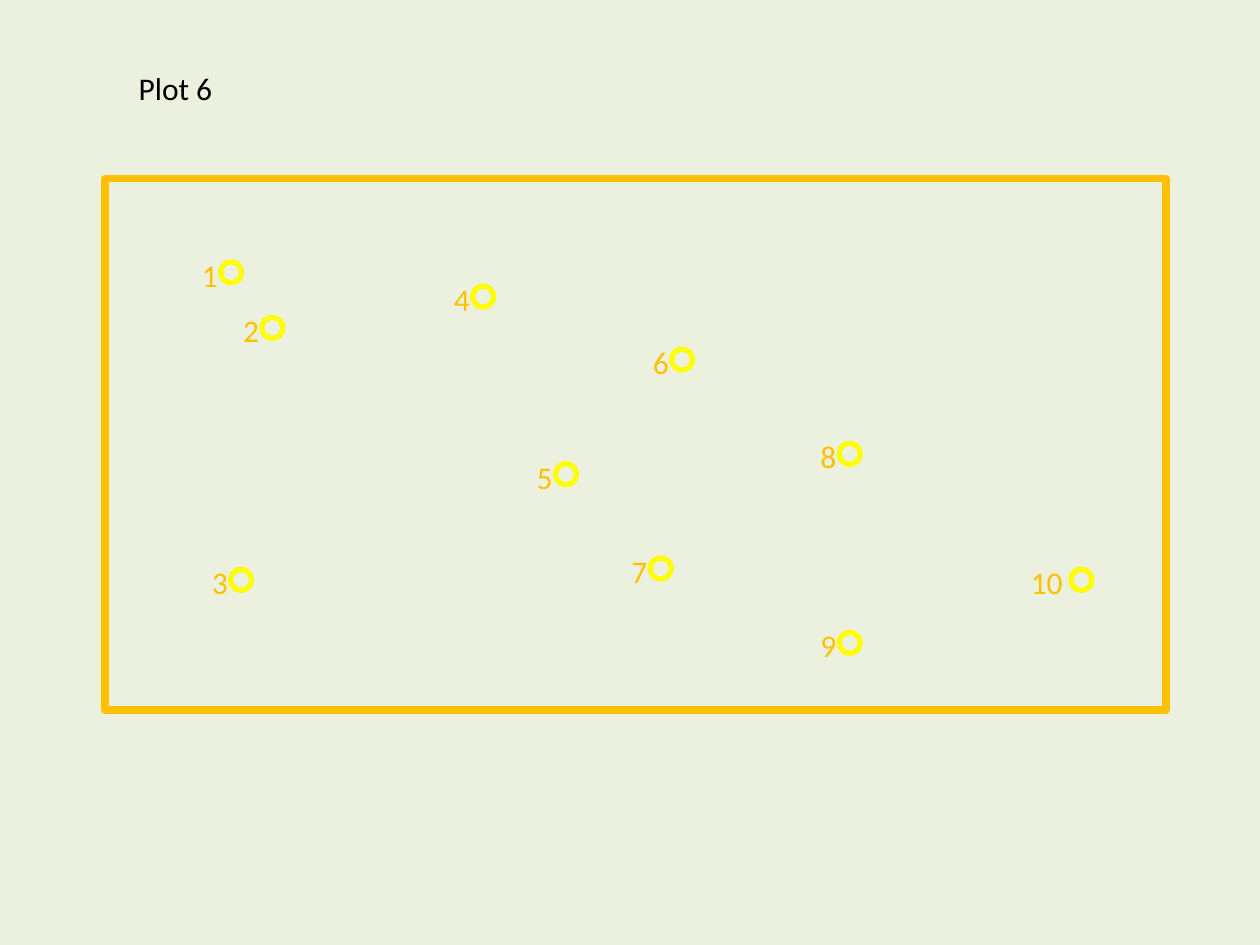
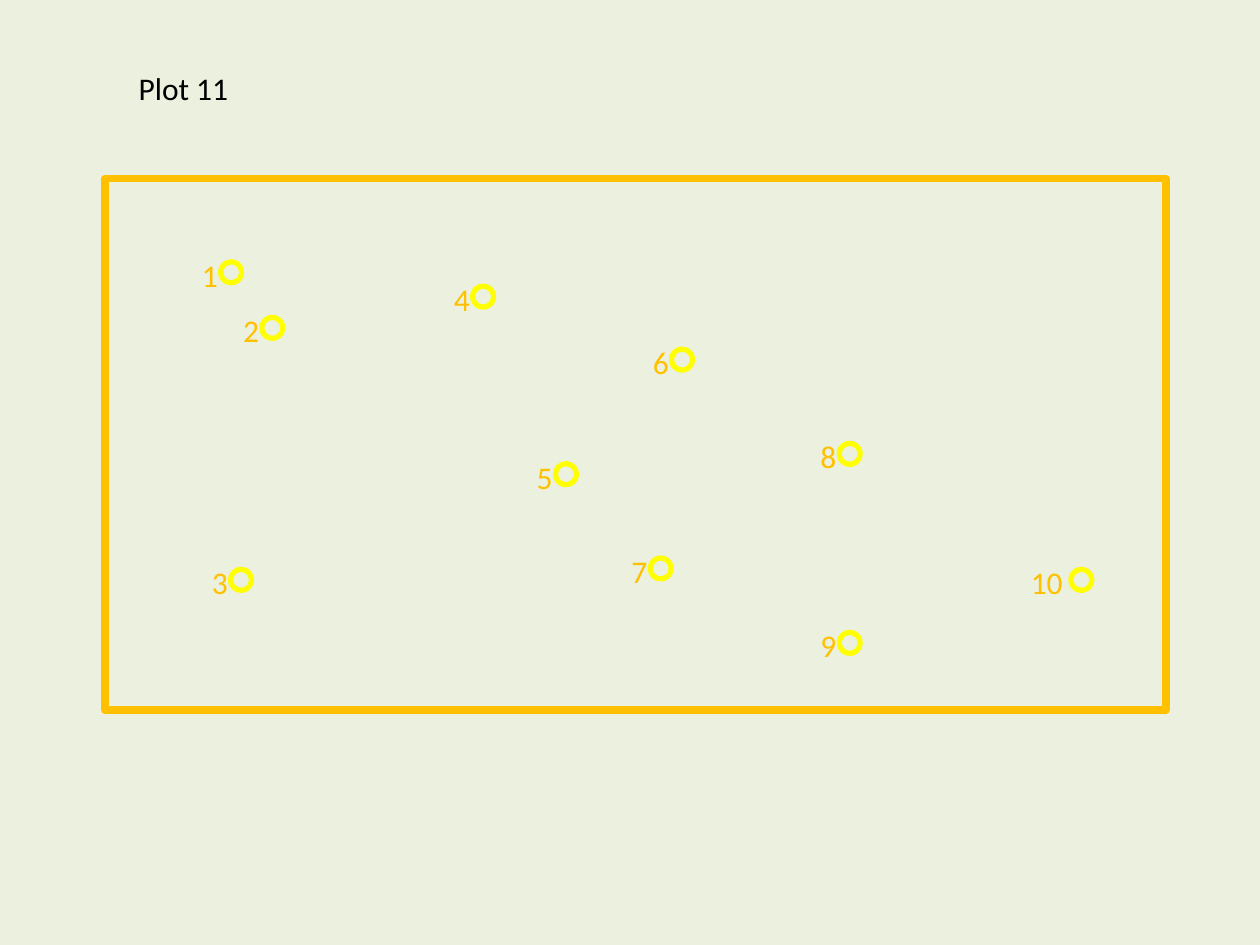
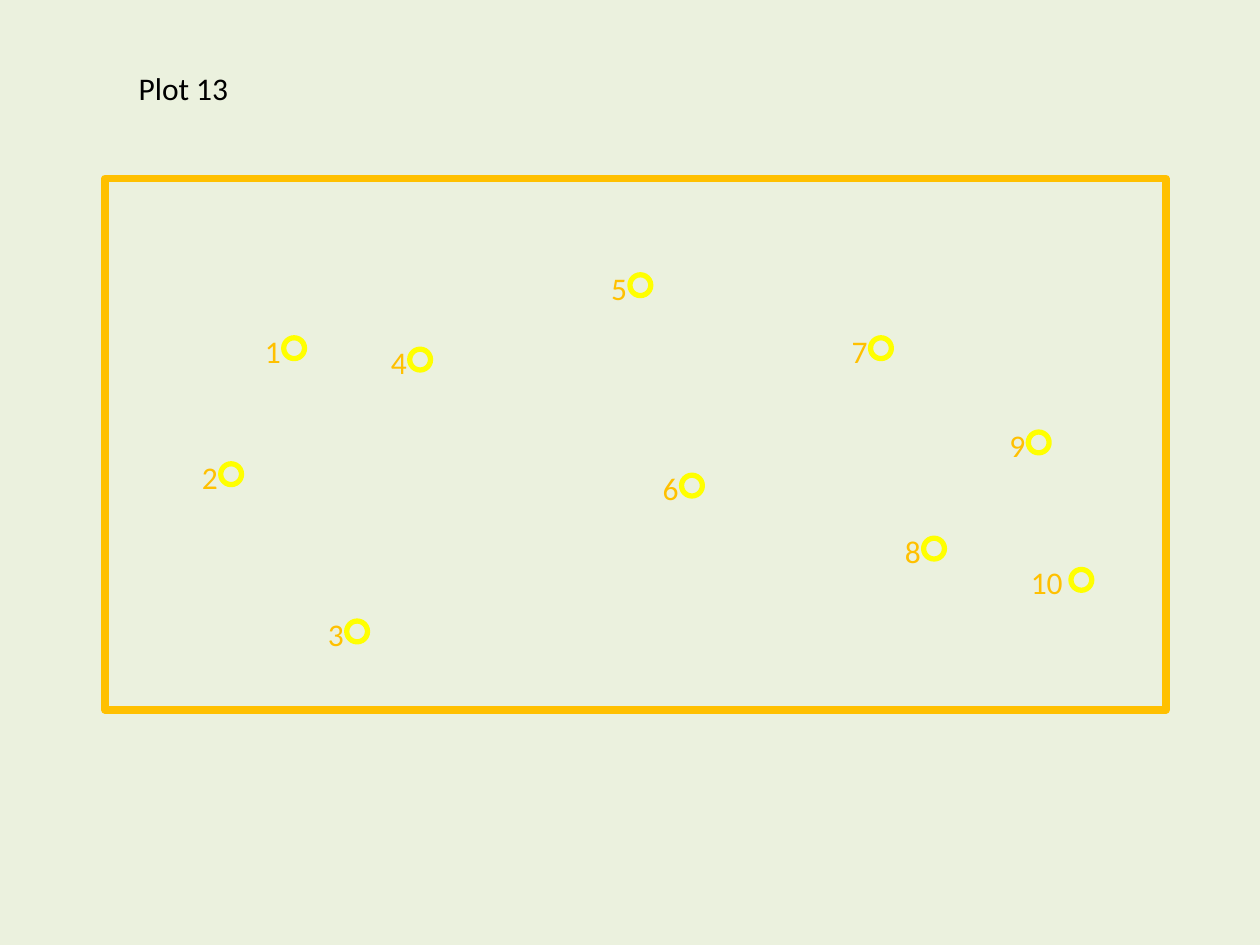
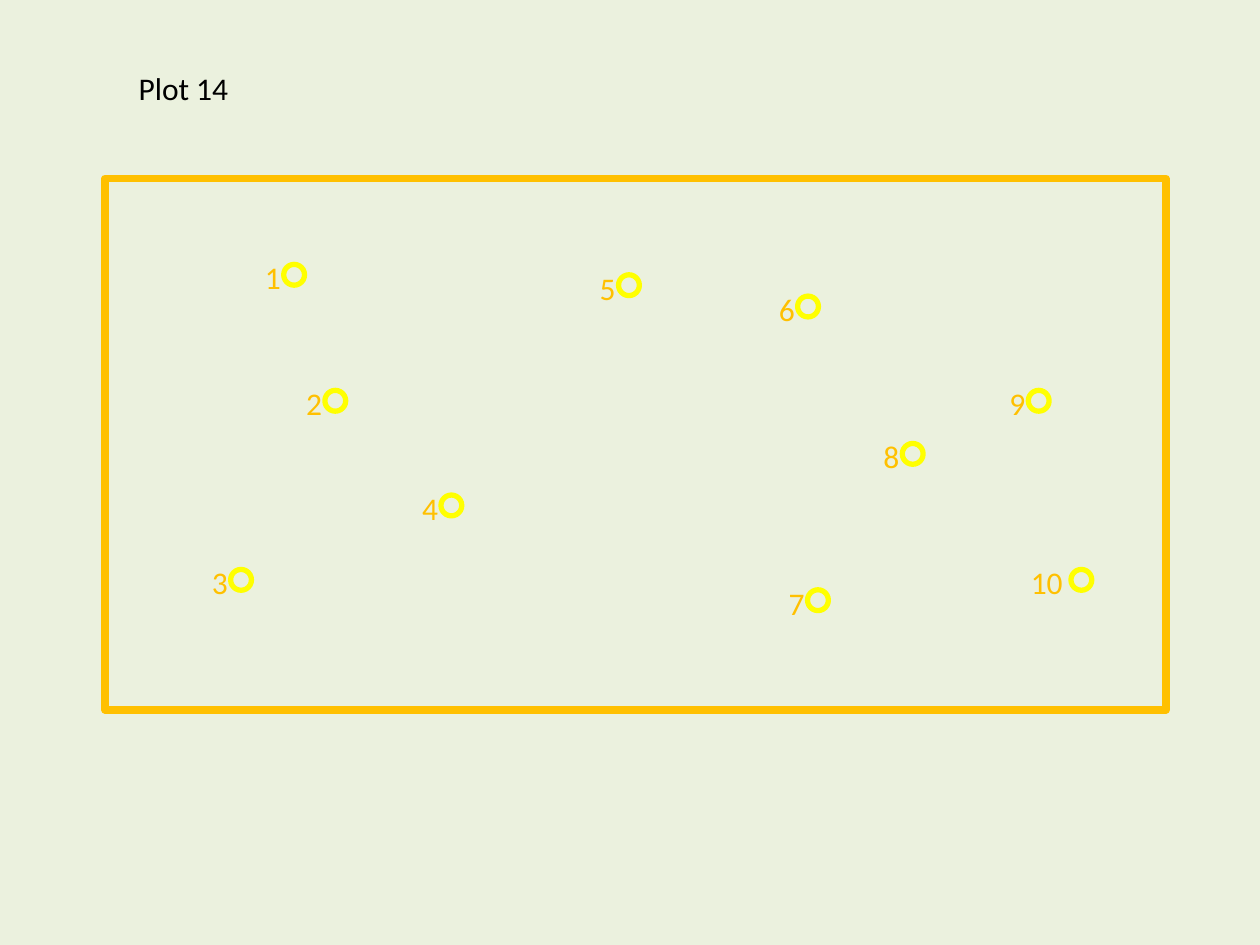
from dataclasses import dataclass

from pptx import Presentation
from pptx import util as u
from pptx.dml.color import RGBColor
from pptx.enum import shapes, text


@dataclass(frozen=True)
class Theme:
    paper: str = "EBF1DE"
    border: str = "FFC000"
    ring: str = "FFFF00"
    ink: str = "000000"
    font: str = "Calibri"
    size: int = 18
    border_width: float = 4.5
    ring_width: float = 3


theme = Theme()
RING = 0.42            # ring diameter, cm
TEXT_HEIGHT = 1.02     # one line of text with its margins, cm
LABEL_DROP = 0.25      # label top above the ring top, cm

# Top left corner of each ring in cm, in the order of the numbers
last_point = (21.59, 11.48)
layout_a = [(4.45, 5.28), (5.28, 6.4), (4.65, 11.48), (9.53, 5.77), (11.2, 9.35),
            (13.54, 7.04), (13.11, 11.25), (16.92, 8.94), (16.92, 12.75), last_point]
layout_b = [(5.72, 6.81), (4.45, 9.35), (6.99, 12.52), (8.26, 7.04), (12.7, 5.54),
            (13.74, 9.58), (17.55, 6.81), (18.62, 10.85), (20.73, 8.71), last_point]
layout_c = [(5.72, 5.33), (6.55, 7.87), (4.65, 11.48), (8.89, 9.98), (12.47, 5.54),
            (16.08, 5.97), (16.28, 11.89), (18.19, 8.94), (20.73, 7.87), last_point]
plots = {6: layout_a, 11: layout_a, 13: layout_b, 14: layout_c}


def add_outline(parent, kind, left, top, width, height, colour, weight):
    """Draw an unfilled preset shape."""
    sp = parent.add_shape(kind, u.Cm(left), u.Cm(top), u.Cm(width), u.Cm(height))
    sp.shadow.inherit = False
    sp.fill.background()
    sp.line.color.rgb = RGBColor.from_string(colour)
    sp.line.width = u.Pt(weight)


def write(sp, words, colour):
    """Put one unwrapped, left-aligned line into a shape."""
    tf = sp.text_frame
    tf.word_wrap = False
    tf.auto_size = text.MSO_AUTO_SIZE.SHAPE_TO_FIT_TEXT
    tf.vertical_anchor = text.MSO_ANCHOR.TOP
    p = tf.paragraphs[0]
    p.alignment = text.PP_ALIGN.LEFT
    r = p.add_run()
    r.text = words
    r.font.name = theme.font
    r.font.size = u.Pt(theme.size)
    r.font.color.rgb = RGBColor.from_string(colour)


# Page and shared background
prs = Presentation()
prs.slide_width, prs.slide_height = u.Cm(25.4), u.Cm(19.05)
paper = prs.slide_master.background.fill
paper.solid()
paper.fore_color.rgb = RGBColor.from_string(theme.paper)
title_only = prs.slide_layouts[5]

for plot, points in plots.items():
    slide = prs.slides.add_slide(title_only)

    # Title
    title = slide.shapes.title
    title.left, title.top = u.Cm(2.54), u.Cm(1.27)
    title.width = u.Cm(2.01 if plot < 10 else 2.34)
    title.height = u.Cm(TEXT_HEIGHT)
    write(title, f"Plot {plot}", theme.ink)

    # Plot border
    add_outline(slide.shapes, shapes.MSO_SHAPE.RECTANGLE, 2.12, 3.6, 21.38, 10.71,
                theme.border, theme.border_width)

    # Numbered rings
    for number, (left, top) in enumerate(points, start=1):
        group = slide.shapes.add_group_shape().shapes
        add_outline(group, shapes.MSO_SHAPE.OVAL, left, top, RING, RING,
                    theme.ring, theme.ring_width)
        shift, width = (0.63, 0.84) if number < 10 else (1.06, 1.32)
        label = group.add_textbox(u.Cm(left - shift), u.Cm(top - LABEL_DROP),
                                  u.Cm(width), u.Cm(TEXT_HEIGHT))
        write(label, str(number), theme.border)

prs.save("out.pptx")
